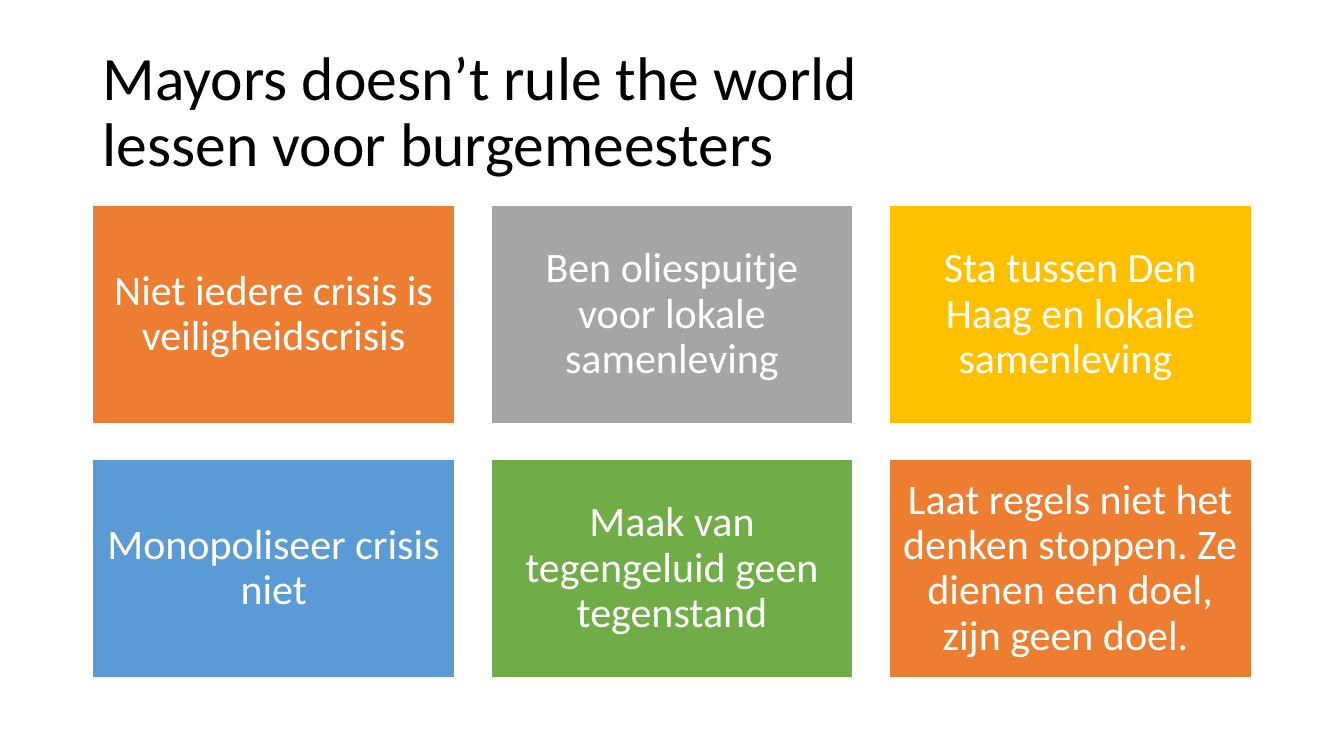
from pptx import Presentation
from pptx.dml.color import RGBColor
from pptx.enum.shapes import MSO_SHAPE
from pptx.enum.text import MSO_ANCHOR, PP_ALIGN
from pptx.util import Pt

PX = 9144
BLACK = RGBColor(0x00, 0x00, 0x00)
WHITE = RGBColor(0xFF, 0xFF, 0xFF)
ORANGE = RGBColor(0xED, 0x7D, 0x31)
GREY = RGBColor(0xA5, 0xA5, 0xA5)
GOLD = RGBColor(0xFF, 0xC0, 0x00)
BLUE = RGBColor(0x5B, 0x9B, 0xD5)
GREEN = RGBColor(0x70, 0xAD, 0x47)

TITLE = "Mayors doesn’t rule the world\nlessen voor burgemeesters"
LESSONS = [
    ("Niet iedere crisis is veiligheidscrisis", ORANGE),
    ("Ben oliespuitje voor lokale samenleving", GREY),
    ("Sta tussen Den Haag en lokale samenleving ", GOLD),
    ("Monopoliseer crisis niet", BLUE),
    ("Maak van tegengeluid geen tegenstand", GREEN),
    ("Laat regels niet het denken stoppen. Ze dienen een doel, zijn geen doel. ", ORANGE),
]


def px(*lengths):
    """Turn px lengths into EMU."""
    return [n * PX for n in lengths]


def write(tf, text, size, color, align=PP_ALIGN.LEFT, inset=(10, 5)):
    """Fill a text frame with one vertically centred paragraph."""
    tf.word_wrap = True
    tf.vertical_anchor = MSO_ANCHOR.MIDDLE
    tf.margin_left = tf.margin_right = inset[0] * PX
    tf.margin_top = tf.margin_bottom = inset[1] * PX
    p = tf.paragraphs[0]
    p.text = text
    p.alignment = align
    p.line_spacing = 0.9
    for r in p.runs:
        r.font.name = "Calibri"
        r.font.size = Pt(size)
        r.font.color.rgb = color


def add_title(s, x, y, w, h):
    """Place the slide title in the given box."""
    tb = s.shapes.add_textbox(*px(x, y, w, h))
    write(tb.text_frame, TITLE, 44, BLACK)


def add_lessons(s, x, y, w, h, cols=3, rows=2, gap=36):
    """Lay out the lesson tiles as an even grid in the given box."""
    tile_w = (w - gap * (cols - 1)) // cols
    tile_h = (h - gap * (rows - 1)) // rows
    for i, (text, color) in enumerate(LESSONS):
        row, col = divmod(i, cols)
        left, top = x + col * (tile_w + gap), y + row * (tile_h + gap)
        sp = s.shapes.add_shape(MSO_SHAPE.RECTANGLE, *px(left, top, tile_w, tile_h))
        sp.shadow.inherit = False
        sp.fill.solid()
        sp.fill.fore_color.rgb = color
        sp.line.color.rgb = WHITE
        sp.line.width = Pt(1)
        write(sp.text_frame, text, 30, WHITE, PP_ALIGN.CENTER, (12, 12))


def main():
    """Build and save the slide."""
    prs = Presentation()
    prs.slide_width, prs.slide_height = px(1333, 750)
    s = prs.slides.add_slide(prs.slide_layouts[6])
    add_title(s, 92, 40, 1150, 145)
    add_lessons(s, 92, 204, 1149, 468)
    prs.save("out.pptx")


if __name__ == "__main__":
    main()
